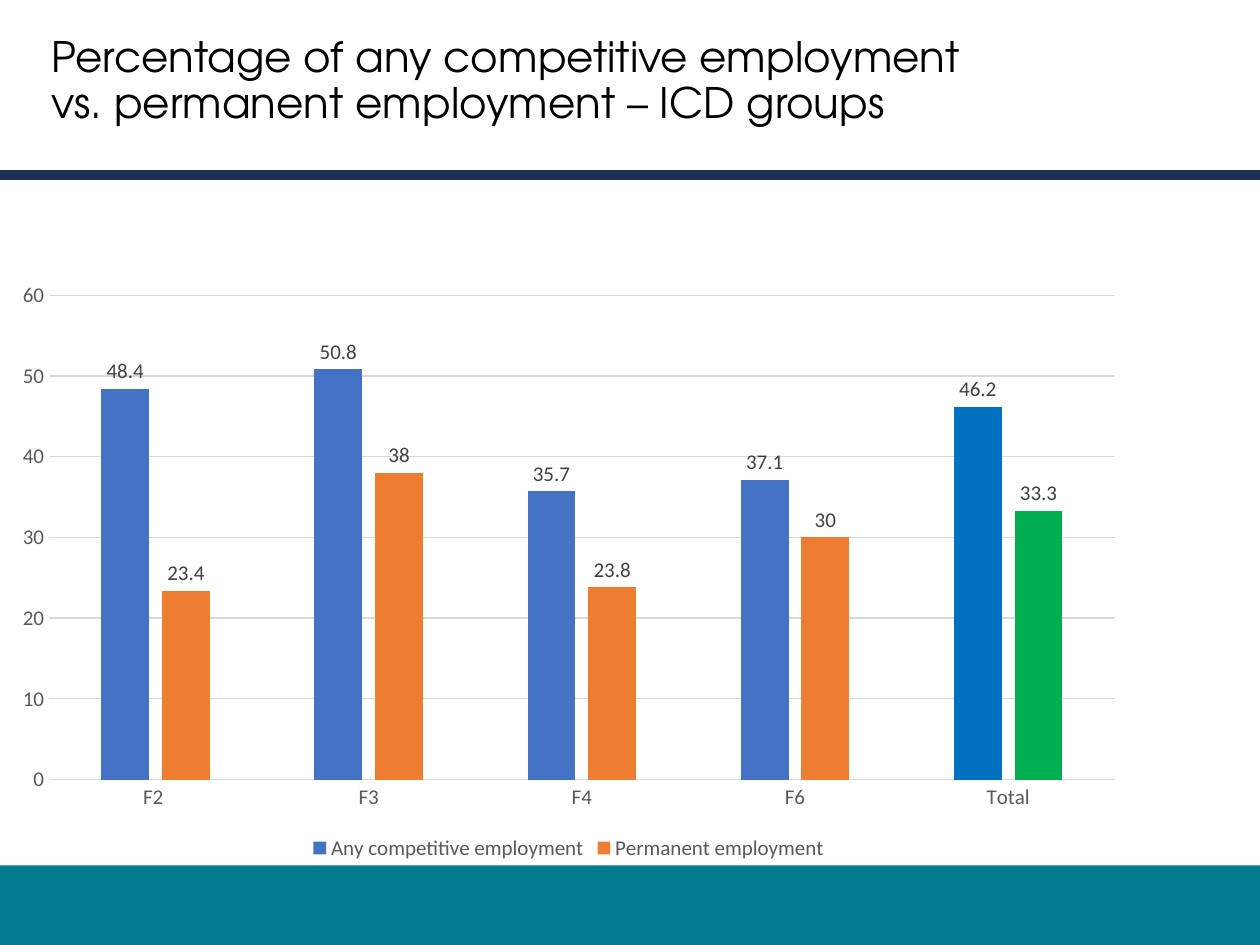
from pptx import Presentation
from pptx.chart.data import CategoryChartData
from pptx.dml.color import RGBColor
from pptx.enum.chart import XL_CHART_TYPE, XL_LABEL_POSITION, XL_LEGEND_POSITION, XL_TICK_MARK
from pptx.enum.shapes import MSO_CONNECTOR, MSO_SHAPE
from pptx.enum.text import MSO_ANCHOR
from pptx.oxml.ns import qn
from pptx.util import Pt
from lxml.etree import SubElement

COLORS = {
    "footer": "007B90", "rule": "1D2F54", "title": "000000",
    "axis_text": "595959", "label": "404040", "grid": "D9D9D9",
    "any": "4472C4", "any_total": "0070C0",
    "permanent": "ED7D31", "permanent_total": "00B050",
}
CATEGORIES = ["F2 ", "F3", "F4", "F6", "Total"]
SERIES = [
    ("Any competitive employment", "any", [48.4, 50.8, 35.7, 37.1, 46.2]),
    ("Permanent employment", "permanent", [23.4, 38, 23.8, 30, 33.3]),
]
WIDTH, HEIGHT = 720, 540


class SlideBuilder:
    title_font = "TeX Gyre Adventor"
    chart_font = "Calibri"

    def __init__(self, slide):
        self.slide = slide

    def color(self, name):
        return RGBColor.from_string(COLORS[name])

    def style_font(self, font, name, size, color):
        font.name = name
        font.size = Pt(size)
        font.color.rgb = self.color(color)

    def style_fill(self, fill, color):
        fill.solid()
        fill.fore_color.rgb = self.color(color)

    def style_line(self, line, color, width):
        line.color.rgb = self.color(color)
        line.width = Pt(width)

    def band(self, left, top, width, height, color):
        shape = self.slide.shapes.add_shape(
            MSO_SHAPE.RECTANGLE, Pt(left), Pt(top), Pt(width), Pt(height))
        shape.shadow.inherit = False
        self.style_fill(shape.fill, color)
        shape.line.fill.background()

    def rule(self, top, color, width):
        connector = self.slide.shapes.add_connector(
            MSO_CONNECTOR.STRAIGHT, Pt(0), Pt(top), Pt(WIDTH), Pt(top))
        self.style_line(connector.line, color, width)
        SubElement(connector.element.spPr, qn("a:effectLst"))

    def title(self, left, top, width, height, text):
        text_frame = self.slide.shapes.add_textbox(
            Pt(left), Pt(top), Pt(width), Pt(height)).text_frame
        text_frame.word_wrap = True
        text_frame.vertical_anchor = MSO_ANCHOR.MIDDLE
        text_frame.text = text
        paragraph = text_frame.paragraphs[0]
        paragraph.line_spacing = 0.9
        self.style_font(paragraph.runs[0].font, self.title_font, 24, "title")

    def column_chart(self, left, top, width, height):
        data = CategoryChartData()
        data.categories = CATEGORIES
        for name, _, values in SERIES:
            data.add_series(name, values)
        chart = self.slide.shapes.add_chart(
            XL_CHART_TYPE.COLUMN_CLUSTERED, Pt(left), Pt(top), Pt(width), Pt(height), data).chart
        chart.has_title = False
        self.style_font(chart.font, self.chart_font, 10, "title")
        chart.has_legend = True
        chart.legend.position = XL_LEGEND_POSITION.BOTTOM
        chart.legend.include_in_layout = False
        self.style_font(chart.legend.font, self.chart_font, 12, "axis_text")
        self.style_axes(chart)
        plot = chart.plots[0]
        plot.gap_width = 219
        plot.overlap = -27
        plot.vary_by_categories = False
        for series, (_, color, _) in zip(plot.series, SERIES):
            self.style_series(series, color)

    def style_axes(self, chart):
        for axis in (chart.category_axis, chart.value_axis):
            axis.major_tick_mark = XL_TICK_MARK.NONE
            axis.minor_tick_mark = XL_TICK_MARK.NONE
            self.style_font(axis.tick_labels.font, self.chart_font, 12, "axis_text")
        self.style_line(chart.category_axis.format.line, "grid", 0.75)
        value_axis = chart.value_axis
        value_axis.minimum_scale = 0
        value_axis.maximum_scale = 60
        value_axis.major_unit = 10
        value_axis.format.line.fill.background()
        self.style_line(value_axis.major_gridlines.format.line, "grid", 0.75)

    def style_series(self, series, color):
        """Colour the columns, set the Total column apart and show the values."""
        series.invert_if_negative = False
        self.style_fill(series.format.fill, color)
        total = series.points[len(CATEGORIES) - 1]
        self.style_fill(total.format.fill, f"{color}_total")
        labels = series.data_labels
        labels.show_value = True
        labels.position = XL_LABEL_POSITION.OUTSIDE_END
        self.style_font(labels.font, self.chart_font, 12, "label")


def main():
    presentation = Presentation()
    presentation.slide_width = Pt(WIDTH)
    presentation.slide_height = Pt(HEIGHT)
    builder = SlideBuilder(presentation.slides.add_slide(presentation.slide_layouts[6]))
    footer_top = 494.6
    chart_top = 154.8
    builder.band(0, footer_top, WIDTH, HEIGHT - footer_top, "footer")
    builder.rule(100, "rule", 6)
    builder.title(22.3, 16.5, 540, 60.5,
                  "Percentage of any competitive employment vs. permanent employment – ICD groups")
    builder.column_chart(0, chart_top, 650, footer_top - chart_top)
    presentation.save("out.pptx")


if __name__ == "__main__":
    main()
